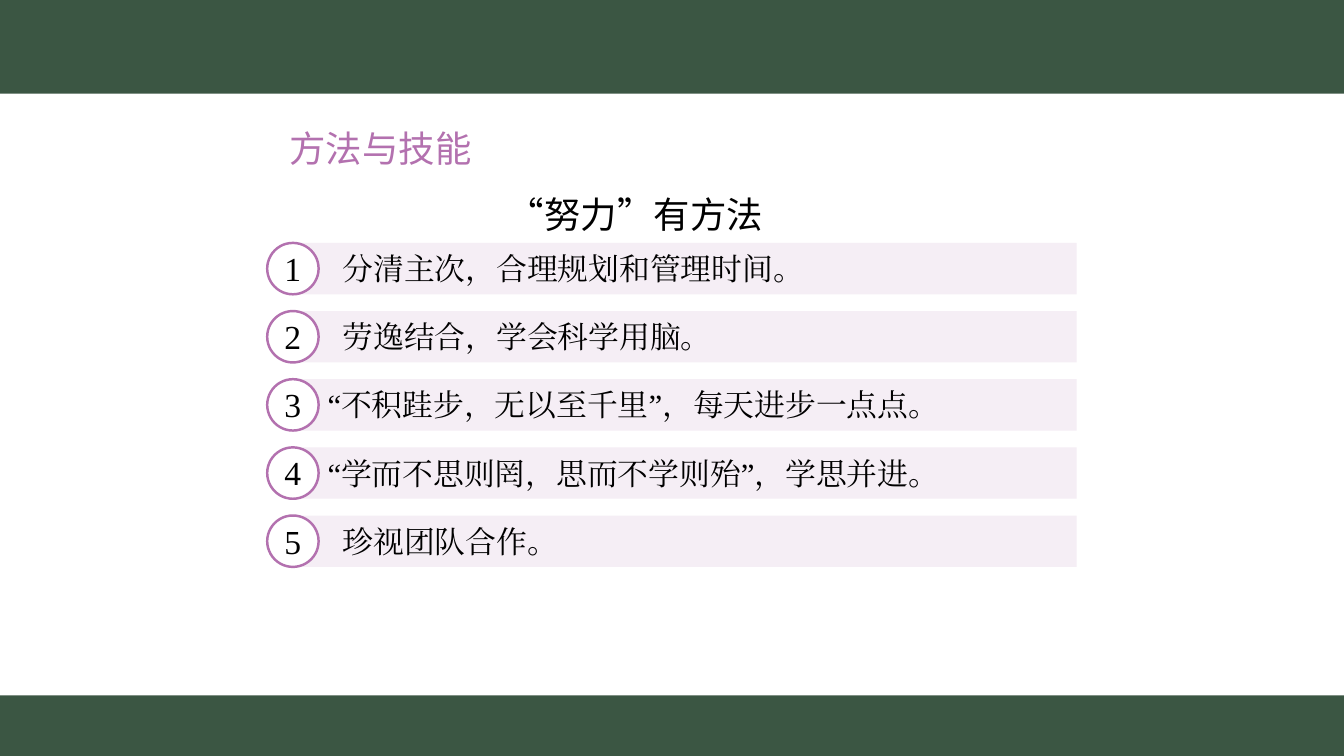
from dataclasses import dataclass

from pptx import Presentation
from pptx.dml.color import RGBColor
from pptx.enum.shapes import MSO_SHAPE as Preset
from pptx.enum.text import PP_ALIGN as Align
from pptx.oxml.ns import qn
from pptx.util import Inches, Pt


@dataclass(frozen=True)
class Theme:
    green: str = "3B5643"
    purple: str = "B371AF"
    lilac: str = "F5EEF5"
    white: str = "FFFFFF"
    black: str = "000000"
    heading_size: int = 26
    item_size: int = 22
    number_size: int = 24
    heading_font: str = "Noto Sans CJK SC"
    title_font: str = "Arial"
    body_font: str = "Times New Roman"


theme = Theme()
deck = Presentation()
deck.slide_width, deck.slide_height = Inches(13.33), Inches(7.5)
page = deck.slides.add_slide(deck.slide_layouts[6])


def add_panel(preset, left, top, width, height, fill, line=None):
    shape = page.shapes.add_shape(
        preset, Inches(left), Inches(top), Inches(width), Inches(height))
    shape.shadow.inherit = False
    shape.fill.solid()
    shape.fill.fore_color.rgb = RGBColor.from_string(fill)
    if line:
        shape.line.color.rgb = RGBColor.from_string(line)
        shape.line.width = Pt(1.75)
    else:
        shape.line.fill.background()


def add_span(para, text, size, font, color):
    span = para.add_run()
    span.text = text
    span.font.size = Pt(size)
    span.font.name = font
    span.font.color.rgb = RGBColor.from_string(color)
    # East Asian characters use the same typeface
    properties = span.font._element
    east_asian = properties.makeelement(qn("a:ea"), {"typeface": font})
    properties.find(qn("a:latin")).addnext(east_asian)


# Green bands at the top and bottom
for top, height in [(0, 0.93), (6.9, 0.6)]:
    add_panel(Preset.RECTANGLE, 0, top, 13.33, height, theme.green)

# Section title and heading, indented by whole characters
headings = [
    ("方法与技能", 2, theme.title_font, theme.purple),
    ("“努力”有方法", 8, theme.heading_font, theme.black),
]
box = page.shapes.add_textbox(Inches(2.05), Inches(0.99), Inches(9.15), Inches(1.34))
frame = box.text_frame
frame.word_wrap = True
for index, (text, indent, font, color) in enumerate(headings):
    para = frame.add_paragraph() if index else frame.paragraphs[0]
    para.line_spacing = 1.5
    para._p.get_or_add_pPr().set("marL", str(Pt(indent * theme.heading_size)))
    add_span(para, text, theme.heading_size, font, color)

# Numbered methods
methods = [
    "分清主次，合理规划和管理时间。",
    "劳逸结合，学会科学用脑。",
    "“不积跬步，无以至千里”，每天进步一点点。",
    "“学而不思则罔，思而不学则殆”，学思并进。",
    "珍视团队合作。",
]
first_top, row_step, row_height = 2.41, 0.676, 0.51
for index, method in enumerate(methods):
    top = first_top + index * row_step
    add_panel(Preset.RECTANGLE, 2.81, top, 7.87, row_height, theme.lilac)
    add_panel(Preset.OVAL, 2.65, top, row_height, row_height, theme.white, theme.purple)

    # Lines that open with a quotation mark hang to the left
    method_left = 3.15 if method.startswith("“") else 3.3
    method_width = 0.2 + 0.31 * len(method)
    labels = [
        (method, method_left, top + 0.02, method_width, 0.47, theme.item_size, Align.LEFT),
        (str(index + 1), 2.72, top, 0.37, 0.5, theme.number_size, Align.CENTER),
    ]
    for text, left, label_top, width, height, size, align in labels:
        box = page.shapes.add_textbox(
            Inches(left), Inches(label_top), Inches(width), Inches(height))
        box.text_frame.word_wrap = False
        para = box.text_frame.paragraphs[0]
        para.alignment = align
        add_span(para, text, size, theme.body_font, theme.black)

deck.save("out.pptx")
